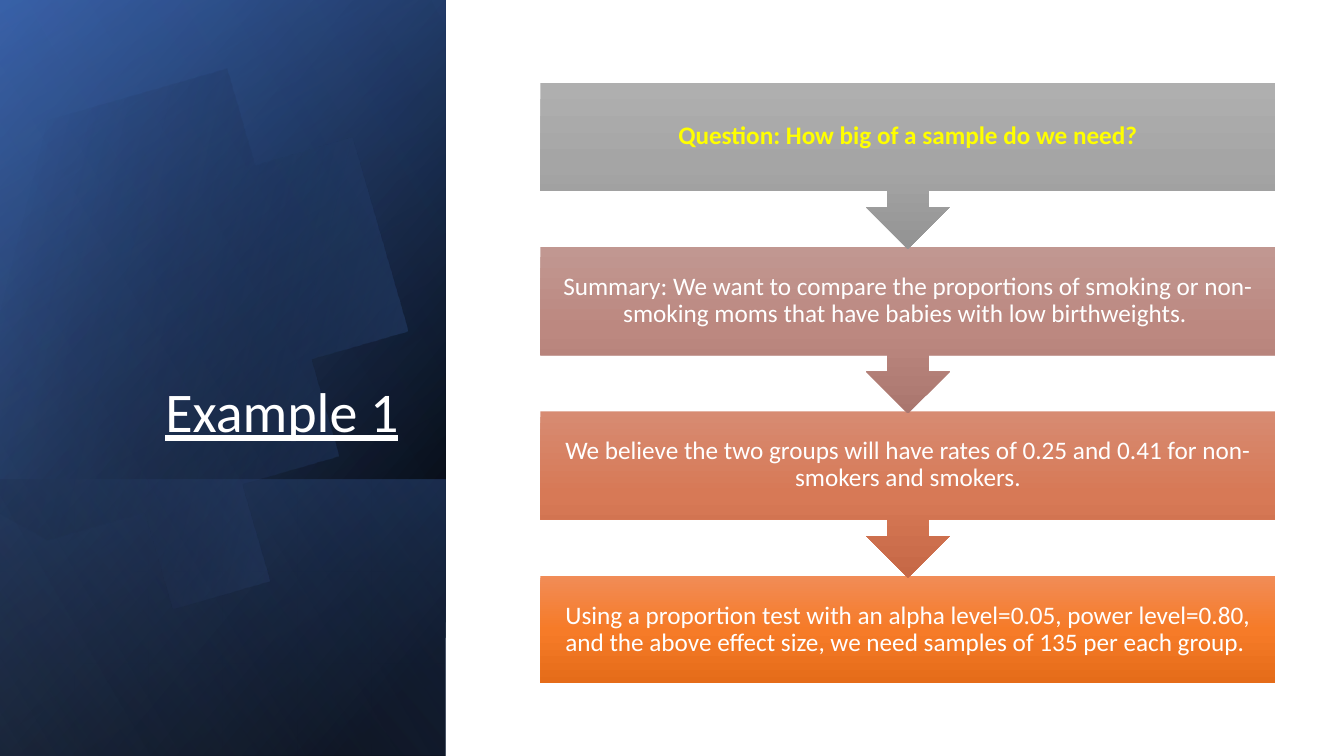
import math
from dataclasses import dataclass

import pptx
import pptx.dml.color
import pptx.enum.shapes
import pptx.enum.text
import pptx.oxml
import pptx.oxml.ns
import pptx.util

Inches = pptx.util.Inches
Pt = pptx.util.Pt
MSO_SHAPE = pptx.enum.shapes.MSO_SHAPE
ANCHOR = pptx.enum.text.MSO_ANCHOR
ALIGN = pptx.enum.text.PP_ALIGN

FONT = "Calibri"
COLORS = {
    "white": "FFFFFF", "black": "000000", "yellow": "FFFF00",
    "navy": "2F5597", "blue": "4472C4", "sky": "8FAADC",
}
Point = tuple[float, float]
Box = tuple[float, float, float, float]


@dataclass
class Stop:
    position: int
    color: str
    opacity: int = 100


@dataclass
class Gradient:
    angle: int
    stops: list[Stop]
    turns_with_shape: bool = True


@dataclass
class Panel:
    box: Box
    gradient: Gradient


@dataclass
class Step:
    text: str
    shades: tuple[str, str, str]
    color: str = COLORS["white"]
    bold: bool = False


SIDE_BOX = (-1.54, 1.54, 7.5, 4.42)
PANELS_BELOW = [
    Panel(SIDE_BOX, Gradient(50, [Stop(8, COLORS["black"]), Stop(100, COLORS["navy"])])),
    Panel(SIDE_BOX, Gradient(30, [Stop(0, COLORS["black"], 0), Stop(99, COLORS["blue"], 46)])),
    Panel((0.84, 3.92, 2.74, 4.42),
          Gradient(130, [Stop(2, COLORS["blue"], 29), Stop(100, COLORS["black"], 30)])),
]
PANEL_ABOVE = Panel(
    SIDE_BOX, Gradient(120, [Stop(0, COLORS["black"], 0), Stop(99, COLORS["sky"], 11)]))

DISC_CENTER = (1.585, 3.345)
DISC_ROTATION = 343.9
DISC_GRADIENT = Gradient(30, [Stop(29, COLORS["black"], 0), Stop(100, COLORS["blue"], 43)])
# Each segment lists the points after the current one: three for a curve, one for a line.
DISC_START = (1.49, 1.1)
DISC_SEGMENTS: list[list[Point]] = [
    [(2.46, 1.12), (3.35, 1.77), (3.63, 2.75)],
    [(3.98, 3.97), (3.28, 5.23), (2.07, 5.58)],
    [(1.31, 5.8), (0.53, 5.61), (-0.03, 5.14)],
    [(-0.15, 5.03)],
    [(-0.15, 1.75)],
    [(0, 1.61)],
    [(0.23, 1.42), (0.5, 1.28), (0.8, 1.19)],
    [(1.03, 1.13), (1.26, 1.1), (1.49, 1.1)],
]

STEPS = [
    Step("Question: How big of a sample do we need?",
         ("AFAFAF", "A5A5A5", "939393"), COLORS["yellow"], True),
    Step("Summary: We want to compare the proportions of smoking or non-smoking moms "
         "that have babies with low birthweights. ", ("C19791", "BC8880", "AA766E")),
    Step("We believe the two groups will have rates of 0.25 and 0.41 for non-smokers "
         "and smokers.", ("D78B72", "D77956", "C66846")),
    Step("Using a proportion test with an alpha level=0.05, power level=0.80, and the "
         "above effect size, we need samples of 135 per each group. ",
         ("F18C57", "F67B28", "E56C19")),
]
STEP_LEFT, STEP_TOP, STEP_WIDTH, STEP_PITCH = 5.36, 0.82, 7.29, 1.63
BODY_HEIGHT, CALLOUT_HEIGHT = 1.07, 1.65


def paint(shape, gradient: Gradient) -> None:
    """Give the shape a gradient fill, with no outline and no shadow."""
    stops = "".join(
        f'<a:gs pos="{stop.position * 1000}"><a:srgbClr val="{stop.color}">'
        f'<a:alpha val="{stop.opacity * 1000}"/></a:srgbClr></a:gs>'
        for stop in gradient.stops)
    fill = pptx.oxml.parse_xml(
        f'<a:gradFill {pptx.oxml.ns.nsdecls("a")} '
        f'rotWithShape="{int(gradient.turns_with_shape)}"><a:gsLst>{stops}</a:gsLst>'
        f'<a:lin ang="{gradient.angle * 60000}" scaled="0"/></a:gradFill>')
    shape.shadow.inherit = False
    shape.line.fill.background()
    shape.fill.solid()
    properties = shape.element.spPr
    properties.replace(properties.find(pptx.oxml.ns.qn("a:solidFill")), fill)


def add_panel(slide, panel: Panel) -> None:
    rectangle = slide.shapes.add_shape(MSO_SHAPE.RECTANGLE, *map(Inches, panel.box))
    rectangle.rotation = 90
    rectangle.element.spPr.xfrm.set("flipH", "1")
    paint(rectangle, panel.gradient)


def bezier(points: list[Point], t: float) -> Point:
    while len(points) > 1:
        points = [(a[0] + (b[0] - a[0]) * t, a[1] + (b[1] - a[1]) * t)
                  for a, b in zip(points, points[1:])]
    return points[0]


def turn_back(point: Point) -> Point:
    """Undo the disc's rotation, which the finished shape applies again."""
    angle = math.radians(-DISC_ROTATION)
    x, y = point[0] - DISC_CENTER[0], point[1] - DISC_CENTER[1]
    return (DISC_CENTER[0] + x * math.cos(angle) - y * math.sin(angle),
            DISC_CENTER[1] + x * math.sin(angle) + y * math.cos(angle))


def add_disc(slide) -> None:
    outline = [DISC_START]
    for segment in DISC_SEGMENTS:
        parts = 20 if len(segment) == 3 else 1
        controls = [outline[-1], *segment]
        outline += [bezier(controls, part / parts) for part in range(1, parts + 1)]
    start, *rest = [turn_back(point) for point in outline]
    builder = slide.shapes.build_freeform(*start, scale=float(Inches(1)))
    builder.add_line_segments(rest, close=True)
    disc = builder.convert_to_shape()
    disc.rotation = DISC_ROTATION
    paint(disc, DISC_GRADIENT)


def add_text(slide, box: Box, text: str, size: float, color: str, align, anchor):
    """Add a wrapped text box and return its frame."""
    frame = slide.shapes.add_textbox(*map(Inches, box)).text_frame
    frame.word_wrap = True
    frame.vertical_anchor = anchor
    frame.text = text
    paragraph = frame.paragraphs[0]
    paragraph.alignment = align
    paragraph.line_spacing = 0.9
    font = paragraph.runs[0].font
    font.name, font.size = FONT, Pt(size)
    font.color.rgb = pptx.dml.color.RGBColor.from_string(color)
    return frame


def add_step(slide, step: Step, top: float, is_last: bool) -> None:
    kind = MSO_SHAPE.RECTANGLE if is_last else MSO_SHAPE.UP_ARROW_CALLOUT
    height = BODY_HEIGHT if is_last else CALLOUT_HEIGHT
    block = slide.shapes.add_shape(
        kind, *map(Inches, (STEP_LEFT, top, STEP_WIDTH, height)))
    block.rotation = 0 if is_last else 180
    stops = [Stop(50 * i, shade) for i, shade in enumerate(step.shades)]
    paint(block, Gradient(90, stops, turns_with_shape=False))

    frame = add_text(slide, (STEP_LEFT, top, STEP_WIDTH, BODY_HEIGHT), step.text, 18,
                     step.color, ALIGN.CENTER, ANCHOR.MIDDLE)
    frame.margin_left = frame.margin_right = Inches(0.14)
    frame.margin_top = frame.margin_bottom = Inches(0.14)
    paragraph = frame.paragraphs[0]
    paragraph.space_after = Pt(6.3)
    paragraph.runs[0].font.bold = step.bold


def main() -> None:
    presentation = pptx.Presentation()
    presentation.slide_width = Inches(13.33)
    presentation.slide_height = Inches(7.5)
    slide = presentation.slides.add_slide(presentation.slide_layouts[6])

    for panel in PANELS_BELOW:
        add_panel(slide, panel)
    add_disc(slide)
    add_panel(slide, PANEL_ABOVE)

    title = add_text(slide, (0.64, 1.84, 3.41, 2.62), "Example 1", 40,
                     COLORS["white"], ALIGN.RIGHT, ANCHOR.BOTTOM)
    title.paragraphs[0].runs[0].font.underline = True

    # Later steps go behind, so that each arrow tip lies over the next block.
    for index, step in reversed(list(enumerate(STEPS))):
        add_step(slide, step, STEP_TOP + index * STEP_PITCH, index == len(STEPS) - 1)

    presentation.save("out.pptx")


if __name__ == "__main__":
    main()
